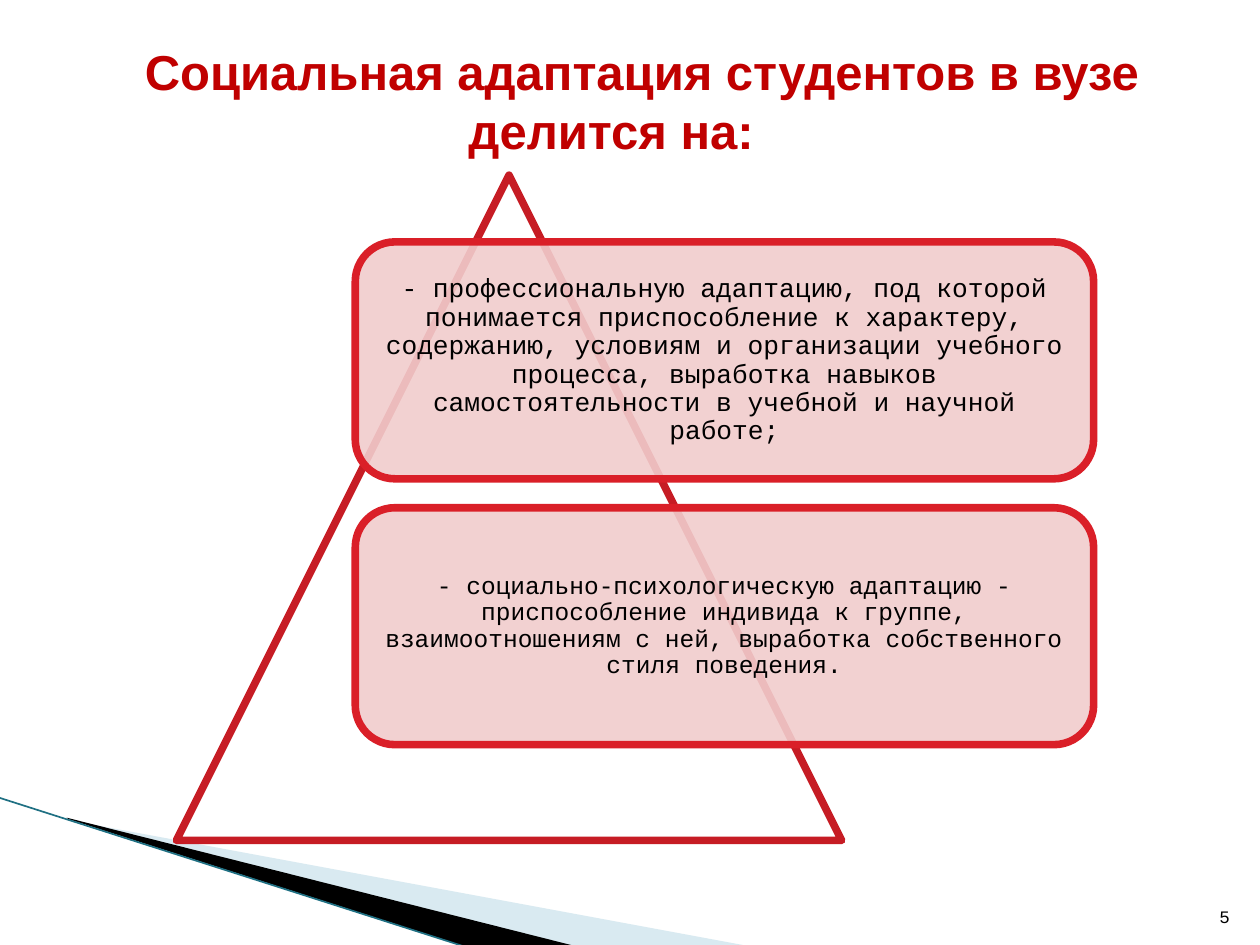
from dataclasses import dataclass

from lxml import etree
from pptx import Presentation
from pptx.dml.color import RGBColor
from pptx.enum.shapes import MSO_CONNECTOR, MSO_SHAPE
from pptx.enum.text import MSO_ANCHOR, MSO_AUTO_SIZE, PP_ALIGN
from pptx.oxml.ns import qn
from pptx.util import Inches, Pt

STRAIGHT = MSO_CONNECTOR.STRAIGHT
TRIANGLE = MSO_SHAPE.ISOSCELES_TRIANGLE
ROUNDED = MSO_SHAPE.ROUNDED_RECTANGLE
MIDDLE, BOTTOM = MSO_ANCHOR.MIDDLE, MSO_ANCHOR.BOTTOM
NO_FIT = MSO_AUTO_SIZE.NONE
CENTER, RIGHT = PP_ALIGN.CENTER, PP_ALIGN.RIGHT
TITLE_ONLY = 5


@dataclass(frozen=True)
class Theme:
    heading: str = "C00000"
    text: str = "000000"
    paper: str = "FFFFFF"
    triangle_line: str = "C61C24"
    card_fill: str = "F1CDCD"
    card_line: str = "DA1F28"
    pale_wedge: str = "A0CBDC"
    dark_wedge: str = "000000"
    edge: str = "1F7083"
    heading_font: str = "Arial"
    body_font: str = "Courier New"
    heading_size: float = 28
    number_size: float = 10
    outline: float = 4.33
    edge_width: float = 0.95


THEME = Theme()


def color(value):
    return RGBColor.from_string(value)


def paint(shape, fill, line=None, opacity=100):
    shape.shadow.inherit = False
    shape.fill.solid()
    shape.fill.fore_color.rgb = color(fill)
    if opacity < 100:
        tone = shape.fill._xPr.find(qn("a:solidFill"))[0]
        etree.SubElement(tone, qn("a:alpha")).set("val", str(opacity * 1000))
    if line:
        shape.line.color.rgb = color(line)
        shape.line.width = Pt(THEME.outline)
    else:
        shape.line.fill.background()


def write(frame, text, size, font, tone, align, anchor, bold=False):
    frame.word_wrap = True
    frame.auto_size = NO_FIT
    frame.vertical_anchor = anchor
    para = frame.paragraphs[0]
    para.alignment = align
    span = para.add_run()
    span.text = text
    span.font.size = Pt(size)
    span.font.name = font
    span.font.bold = bold
    span.font.color.rgb = color(tone)
    return para


def add_wedge(page, points, fill, opacity=100):
    corners = [(Inches(x), Inches(y)) for x, y in points]
    builder = page.shapes.build_freeform(*corners[0])
    builder.add_line_segments(corners[1:], close=True)
    paint(builder.convert_to_shape(), fill, opacity=opacity)


def add_corner(page, left, top, right, bottom):
    add_wedge(page, [(left + 0.56, top + 0.18), (right, bottom),
                     (right - 1.39, bottom), (left + 0.56, top + 0.17)],
              THEME.pale_wedge, 40)
    add_wedge(page, [(left + 0.54, top + 0.16), (right - 1.38, bottom),
                     (right - 2.23, bottom + 0.01), (left + 0.55, top + 0.17)],
              THEME.dark_wedge)
    edge = page.shapes.add_connector(STRAIGHT, Inches(left), Inches(top),
                                     Inches(right - 2.24), Inches(bottom + 0.01))
    edge.line.color.rgb = color(THEME.edge)
    edge.line.width = Pt(THEME.edge_width)
    etree.SubElement(edge._element.spPr, qn("a:effectLst"))


def add_heading(page, text, left, top, width, height):
    title = page.shapes.title
    title.left, title.top = Inches(left), Inches(top)
    title.width, title.height = Inches(width), Inches(height)
    para = write(title.text_frame, text, THEME.heading_size, THEME.heading_font,
                 THEME.heading, CENTER, MIDDLE, bold=True)
    para._p.get_or_add_pPr().set("indent", str(Inches(0.49)))


def add_card(page, text, size, left, top, width, height):
    card = page.shapes.add_shape(ROUNDED, Inches(left), Inches(top),
                                 Inches(width), Inches(height))
    paint(card, THEME.card_fill, THEME.card_line, 90)
    frame = card.text_frame
    frame.margin_left = frame.margin_right = Inches(0.06)
    frame.margin_top = frame.margin_bottom = Inches(0.06)
    para = write(frame, text, size, THEME.body_font, THEME.text, CENTER, MIDDLE)
    para.line_spacing = 0.9


def add_pyramid(page, cards, left, top, side):
    triangle = page.shapes.add_shape(TRIANGLE, Inches(left), Inches(top),
                                     Inches(side), Inches(side))
    paint(triangle, THEME.paper, THEME.triangle_line)
    card_height, gap = 1.88, 0.23
    for index, (text, size) in enumerate(cards):
        add_card(page, text, size, left + 1.42,
                 top + 0.53 + index * (card_height + gap), 5.86, card_height)


def add_page_number(page, text, left, top, width, height):
    box = page.shapes.add_textbox(Inches(left), Inches(top),
                                  Inches(width), Inches(height))
    write(box.text_frame, text, THEME.number_size, THEME.body_font,
          THEME.text, RIGHT, BOTTOM)


def main():
    deck = Presentation()
    deck.slide_width, deck.slide_height = Inches(10), Inches(7.5)
    page = deck.slides.add_slide(deck.slide_layouts[TITLE_ONLY])
    add_corner(page, -0.01, 6.33, 5.95, 7.51)
    add_pyramid(page, [
        ("- профессиональную адаптацию, под которой понимается приспособление "
         "к характеру, содержанию, условиям и организации учебного процесса, "
         "выработка навыков самостоятельности в учебной и научной работе;", 15),
        ("- социально-психологическую адаптацию - приспособление индивида "
         "к группе, взаимоотношениям с ней, выработка собственного стиля "
         "поведения.", 14),
    ], 1.4, 1.39, 5.28)
    add_heading(page, "Социальная адаптация студентов в вузе делится на:",
                0.35, 0.21, 9, 1.17)
    add_page_number(page, "5", 9.46, 7.01, 0.4, 0.4)
    deck.save("out.pptx")


if __name__ == "__main__":
    main()
